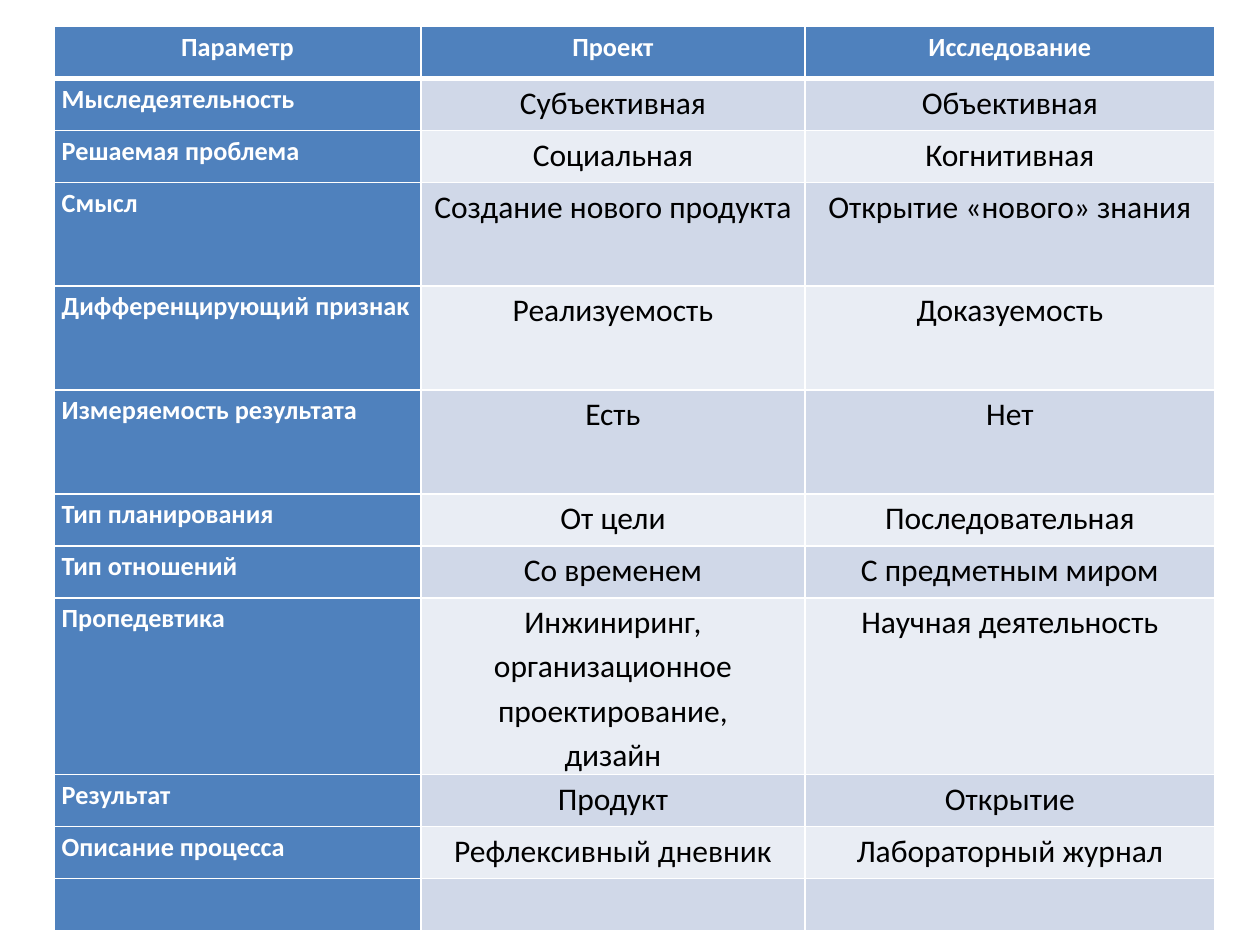
from dataclasses import dataclass

import pptx
import pptx.dml.color
import pptx.enum.text
import pptx.oxml.ns
import pptx.util
from lxml import etree

Inches = pptx.util.Inches
Pt = pptx.util.Pt
RGBColor = pptx.dml.color.RGBColor
PP_ALIGN = pptx.enum.text.PP_ALIGN
qn = pptx.oxml.ns.qn

BLUE = RGBColor(0x4F, 0x81, 0xBD)
BAND_DARK = RGBColor(0xD0, 0xD8, 0xE8)
BAND_LIGHT = RGBColor(0xE9, 0xED, 0xF4)
WHITE = RGBColor(0xFF, 0xFF, 0xFF)
BLACK = RGBColor(0, 0, 0)

FONT = "Calibri"
ROW_UNIT = 0.4125
COL_WIDTHS = (2.91, 3.05, 3.25)


@dataclass(frozen=True)
class Row:
    parameter: str
    project: str
    research: str
    units: int = 1


@dataclass(frozen=True)
class CellStyle:
    fill: RGBColor
    color: RGBColor
    size: int
    bold: bool
    align: PP_ALIGN


ROWS = (
    Row("Параметр", "Проект", "Исследование"),
    Row("Мыследеятельность", "Субъективная", "Объективная"),
    Row("Решаемая проблема", "Социальная", "Когнитивная"),
    Row("Смысл", "Создание нового продукта", "Открытие «нового» знания", 2),
    Row("Дифференцирующий признак", "Реализуемость", "Доказуемость", 2),
    Row("Измеряемость результата", "Есть", "Нет", 2),
    Row("Тип планирования", "От цели", "Последовательная"),
    Row("Тип отношений", "Со временем", "С предметным миром"),
    Row("Пропедевтика", "Инжиниринг, организационное проектирование,\nдизайн",
        "Научная деятельность", 3),
    Row("Результат", "Продукт", "Открытие"),
    Row("Описание процесса", "Рефлексивный дневник", "Лабораторный журнал"),
    Row("", "", ""),
)

HEADER = CellStyle(BLUE, WHITE, 15, True, PP_ALIGN.CENTER)
LABEL = CellStyle(BLUE, WHITE, 15, True, PP_ALIGN.LEFT)
BODY_DARK = CellStyle(BAND_DARK, BLACK, 18, False, PP_ALIGN.CENTER)
BODY_LIGHT = CellStyle(BAND_LIGHT, BLACK, 18, False, PP_ALIGN.CENTER)


def style_for(row: int, col: int) -> CellStyle:
    if row == 0:
        return HEADER
    if col == 0:
        return LABEL
    return BODY_DARK if row % 2 else BODY_LIGHT


def set_borders(cell, top: int, bottom: int) -> None:
    """Draw white cell edges; widths are in points."""
    tc_pr = cell._tc.get_or_add_tcPr()
    for tag, width in (("lnL", 1), ("lnR", 1), ("lnT", top), ("lnB", bottom)):
        ln = etree.SubElement(tc_pr, qn(f"a:{tag}"), w=str(Pt(width)))
        fill = etree.SubElement(ln, qn("a:solidFill"))
        etree.SubElement(fill, qn("a:srgbClr"), val=str(WHITE))


def fill_cell(cell, text: str, style: CellStyle) -> None:
    cell.fill.solid()
    cell.fill.fore_color.rgb = style.fill
    cell.margin_left = cell.margin_right = Inches(0.06)
    cell.margin_top = cell.margin_bottom = 0
    if not text:
        return
    tf = cell.text_frame
    for i, line in enumerate(text.split("\n")):
        p = tf.add_paragraph() if i else tf.paragraphs[0]
        p.alignment = style.align
        p.line_spacing = 1.15
        r = p.add_run()
        r.text = line
        r.font.name = FONT
        r.font.size = Pt(style.size)
        r.font.bold = style.bold
        r.font.color.rgb = style.color


def add_comparison_table(slide) -> None:
    height = ROW_UNIT * sum(row.units for row in ROWS)
    table = slide.shapes.add_table(
        len(ROWS), len(COL_WIDTHS), Inches(0.43), Inches(0.21),
        Inches(sum(COL_WIDTHS)), Inches(height)).table
    table.first_col = True
    for column, width in zip(table.columns, COL_WIDTHS):
        column.width = Inches(width)
    for i, row in enumerate(ROWS):
        table.rows[i].height = Inches(ROW_UNIT * row.units)
        for j, text in enumerate((row.parameter, row.project, row.research)):
            cell = table.cell(i, j)
            set_borders(cell, top=3 if i == 1 else 1, bottom=3 if i == 0 else 1)
            fill_cell(cell, text, style_for(i, j))


def main() -> None:
    prs = pptx.Presentation()
    prs.slide_width = Inches(10)
    prs.slide_height = Inches(7.5)
    slide = prs.slides.add_slide(prs.slide_layouts[6])
    add_comparison_table(slide)
    prs.save("out.pptx")


if __name__ == "__main__":
    main()
